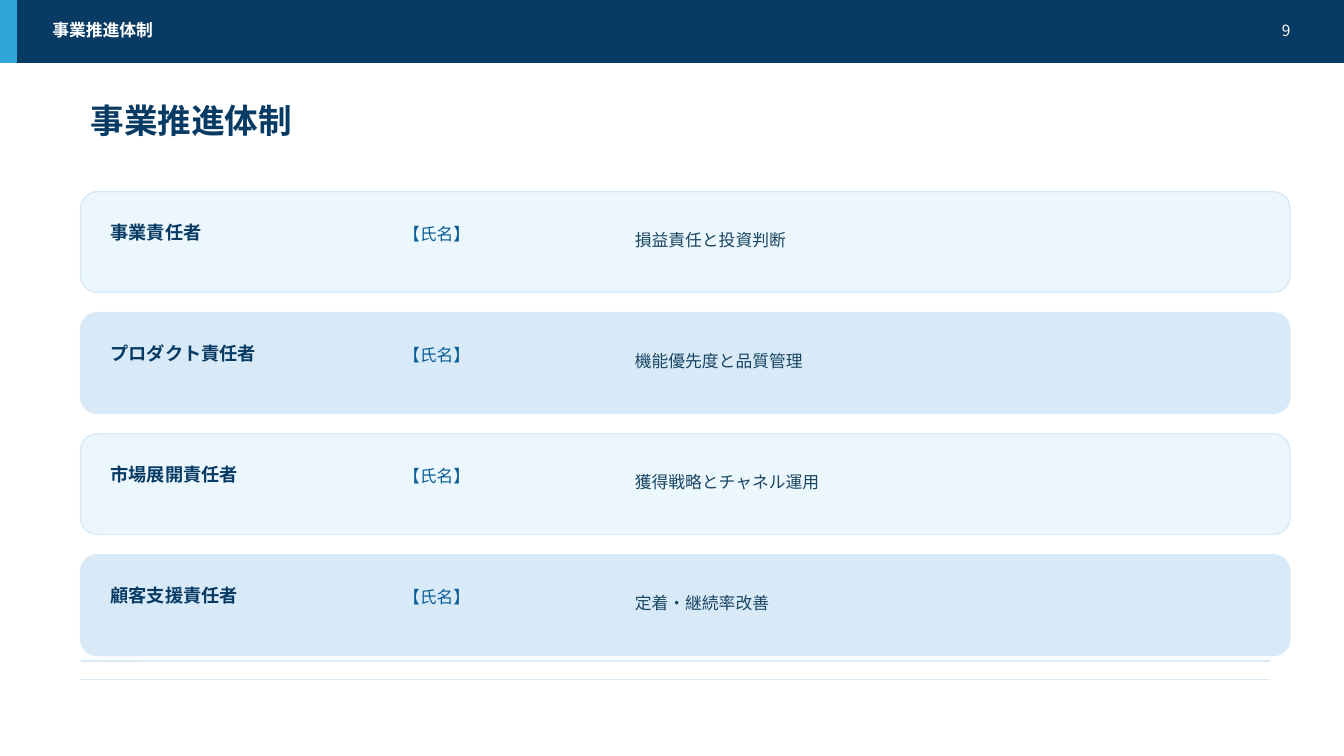
from lxml.etree import SubElement
from pptx import Presentation
from pptx.dml.color import RGBColor
from pptx.enum.shapes import MSO_CONNECTOR, MSO_SHAPE
from pptx.enum.text import MSO_ANCHOR, PP_ALIGN
from pptx.oxml.ns import qn
from pptx.util import Cm, Pt

COLORS = {
    "navy": "083B64",
    "cyan": "2EA7D8",
    "white": "FFFFFF",
    "pale": "ECF6FD",
    "mist": "D8EAF8",
    "blue": "0A5E96",
    "slate": "184562",
}
FONT = "Noto Sans CJK JP"
TITLE = "事業推進体制"
ROLES = [
    ("事業責任者", "【氏名】", "損益責任と投資判断"),
    ("プロダクト責任者", "【氏名】", "機能優先度と品質管理"),
    ("市場展開責任者", "【氏名】", "獲得戦略とチャネル運用"),
    ("顧客支援責任者", "【氏名】", "定着・継続率改善"),
]
LEFT = 2.03
CARD_TOP, CARD_PITCH = 4.83, 3.05
RULE_TOP, RULE_PITCH = 16.66, 0.46


def rgb(name):
    """Return the palette colour with this name."""
    return RGBColor.from_string(COLORS[name])


def add_box(s, kind, x, y, w, h, fill, line):
    """Add a filled preset shape with a thin outline."""
    sp = s.shapes.add_shape(kind, Cm(x), Cm(y), Cm(w), Cm(h))
    sp.shadow.inherit = False
    sp.fill.solid()
    sp.fill.fore_color.rgb = rgb(fill)
    sp.line.color.rgb = rgb(line)
    sp.line.width = Pt(1)


def add_text(s, text, x, y, w, h, size, color, bold=False, font=FONT, align=PP_ALIGN.LEFT):
    """Add a single line of text, centred vertically in its box."""
    tf = s.shapes.add_textbox(Cm(x), Cm(y), Cm(w), Cm(h)).text_frame
    tf.word_wrap = True
    tf.vertical_anchor = MSO_ANCHOR.MIDDLE
    p = tf.paragraphs[0]
    p.text = text
    p.alignment = align
    p.font.size = Pt(size)
    p.font.bold = bold
    p.font.color.rgb = rgb(color)
    p.font.name = font
    props = p._p.pPr.find(qn("a:defRPr"))
    SubElement(props, qn("a:ea")).set("typeface", FONT)


def add_rule(s, y):
    """Add a thin horizontal line at the foot of the slide."""
    line = s.shapes.add_connector(MSO_CONNECTOR.STRAIGHT, Cm(LEFT), Cm(y), Cm(32), Cm(y))
    line.line.color.rgb = rgb("mist")
    line.line.width = Pt(1)
    SubElement(line._element.spPr, qn("a:effectLst"))


def add_header(s):
    """Add the top band with the section name and page number."""
    add_box(s, MSO_SHAPE.RECTANGLE, 0, 0, 33.87, 1.57, "navy", "navy")
    add_box(s, MSO_SHAPE.RECTANGLE, 0, 0, 0.41, 1.57, "cyan", "cyan")
    add_text(s, TITLE, 1.07, 0.43, 22.35, 0.66, 12, "white", bold=True)
    add_text(s, "9", 30.86, 0.43, 1.91, 0.66, 11, "white", align=PP_ALIGN.RIGHT)


def add_role_card(s, y, fill, role, person, duty):
    """Add a card naming a role, its holder and its duty."""
    add_box(s, MSO_SHAPE.ROUNDED_RECTANGLE, LEFT, y, 30.48, 2.54, fill, "mist")
    add_text(s, role, 2.54, y + 0.71, 6.86, 0.61, 13, "navy", bold=True)
    add_text(s, person, 9.91, y + 0.76, 5.33, 0.61, 12, "blue")
    add_text(s, duty, 15.75, y + 0.64, 15.75, 1.14, 12, "slate")


def main():
    """Build the slide and save it."""
    prs = Presentation()
    prs.slide_width, prs.slide_height = Cm(33.87), Cm(19.05)
    s = prs.slides.add_slide(prs.slide_layouts[6])
    for i in range(2):
        add_rule(s, RULE_TOP + i * RULE_PITCH)
    add_header(s)
    add_text(s, TITLE, LEFT, 2.41, 28.96, 1.22, 24, "navy", bold=True, font="Lato")
    for i, entry in enumerate(ROLES):
        fill = "mist" if i % 2 else "pale"
        add_role_card(s, CARD_TOP + i * CARD_PITCH, fill, *entry)
    prs.save("out.pptx")


if __name__ == "__main__":
    main()
